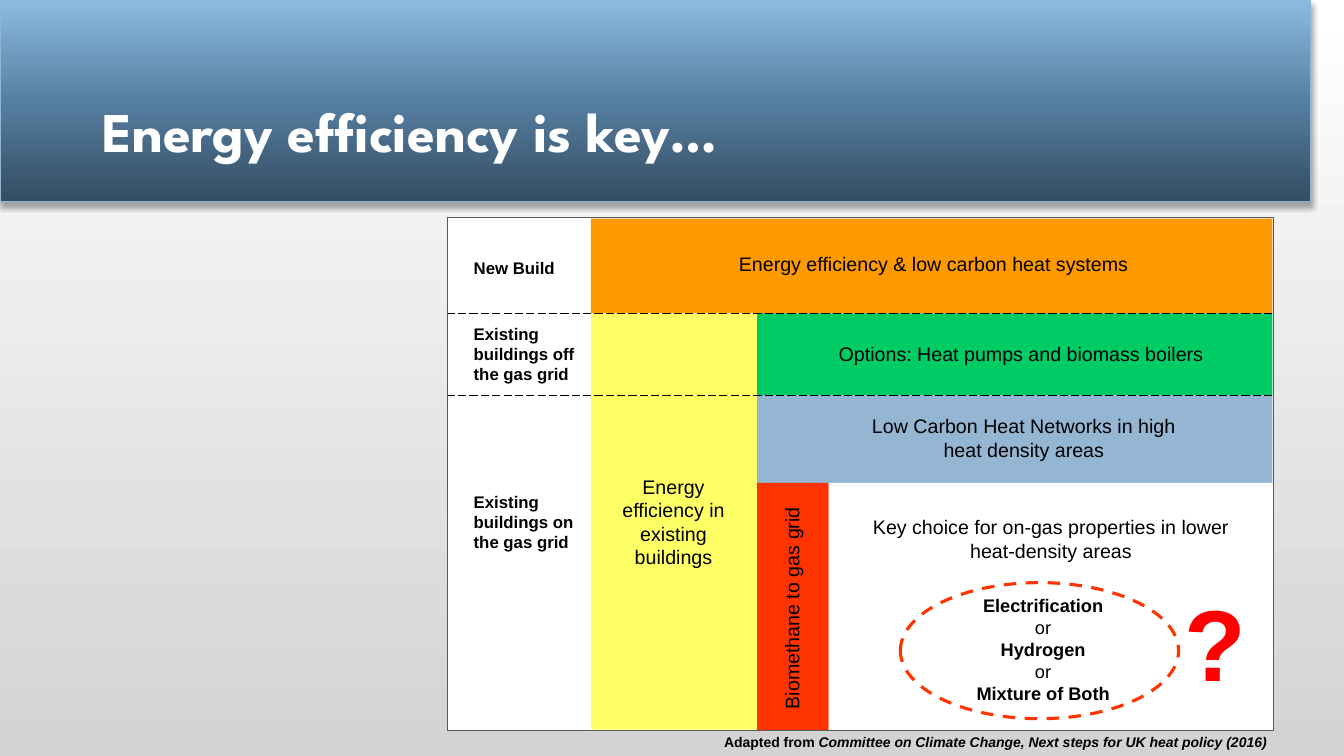
from dataclasses import dataclass

from lxml.etree import SubElement
from pptx import Presentation
from pptx.dml.color import RGBColor
from pptx.enum.dml import MSO_LINE
from pptx.enum.shapes import MSO_CONNECTOR, MSO_SHAPE
from pptx.enum.text import PP_ALIGN
from pptx.oxml.ns import qn
from pptx.util import Inches, Pt


@dataclass(frozen=True)
class Theme:
    head: str = "League Spartan"
    body: str = "Arial"
    title: int = 40
    text: int = 14
    choice: int = 13
    label: int = 12
    note: int = 10
    mark: int = 72
    black: str = "000000"
    white: str = "FFFFFF"
    frame: str = "595959"
    orange: str = "FF9900"
    yellow: str = "FFFF66"
    green: str = "00CC66"
    blue: str = "94B6D2"
    red: str = "FF3300"
    alert: str = "FF0000"
    edge: str = "92B5D5"
    back: tuple = ((0, "FFFFFF"), (100, "D3D3D3"))
    band: tuple = ((0, "334C62"), (50, "567FA1"), (70, "6D97BA"), (100, "8BBBE3"))


T = Theme()
WIDE, HIGH = 13.33, 7.5
COLS = [4.44, 5.86, 7.51, 8.22, 12.62]
ROWS = [2.17, 3.11, 3.92, 4.79, 7.24]
FRAME = (4.44, 2.16, 8.19, 5.09)
OVAL = (8.93, 5.78, 2.76, 1.35)
BASE = 2.06
BANNER = [(WIDE, 0), (0, 0), (0, BASE), (2.18, BASE), (2.6, 2.38), (2.62, 2.39),
          (2.67, 2.39), (2.7, 2.38), (3.11, BASE), (WIDE, BASE)]

# first column, first row, end column, end row, colour
CELLS = [
    (1, 0, 4, 1, T.orange),
    (1, 1, 2, 4, T.yellow),
    (2, 1, 4, 2, T.green),
    (2, 2, 4, 3, T.blue),
    (2, 3, 3, 4, T.red),
    (3, 3, 4, 4, T.white),
]

# top, height, text
LABELS = [
    (2.51, 0.31, "New Build"),
    (3.16, 0.71, "Existing buildings off the gas grid"),
    (4.83, 0.71, "Existing buildings on the gas grid"),
]

# box, text, format
NOTES = [
    ((7.23, 2.45, 4.1, 0.34), "Energy efficiency & low carbon heat systems", {}),
    ((8.22, 3.34, 3.86, 0.34), "Options: Heat pumps and biomass boilers", {}),
    ((6.04, 4.66, 1.28, 1.05), "Energy efficiency in existing buildings",
     {"align": PP_ALIGN.CENTER}),
    ((8.5, 4.06, 3.31, 0.57), "Low Carbon Heat Networks in high heat density areas",
     {"align": PP_ALIGN.CENTER}),
    ((6.74, 5.85, 2.23, 0.34), "Biomethane to gas grid", {"turn": 270}),
    ((8.36, 5.06, 4.13, 0.58),
     "Key choice for on-gas properties in lower heat-density areas",
     {"align": PP_ALIGN.CENTER}),
]
CHOICES = ["Electrification", "or", "Hydrogen", "or", "Mixture of Both"]
SOURCE = [("Adapted from ", {"bold": True}),
          ("Committee on Climate Change, Next steps for UK heat policy (2016)",
           {"bold": True, "italic": True})]


def rgb(code):
    return RGBColor.from_string(code)


def inch(box):
    return [Inches(v) for v in box]


def blend(fill, root, stops, angle):
    """Fill with a gradient; the angle runs counter-clockwise."""
    fill.gradient()
    fill.gradient_angle = angle
    ramp = next(root.iter(qn("a:gsLst")))
    for old in list(ramp):
        ramp.remove(old)
    for spot, code in stops:
        stop = SubElement(ramp, qn("a:gs"), pos=str(spot * 1000))
        SubElement(stop, qn("a:srgbClr"), val=code)


def stroke(line, code, width, dash=None):
    line.color.rgb = rgb(code)
    line.width = Pt(width)
    if dash:
        line.dash_style = dash


def write(slide, box, text, size=T.text, font=T.body, color=T.black, bold=False,
          align=PP_ALIGN.LEFT, turn=0, wrap=True):
    """Text is a string, or a list of paragraphs made of (words, style) runs."""
    shape = slide.shapes.add_textbox(*inch(box))
    shape.rotation = turn
    frame = shape.text_frame
    frame.word_wrap = wrap
    paras = [[(text, {"bold": bold})]] if isinstance(text, str) else text
    for n, runs in enumerate(paras):
        para = frame.add_paragraph() if n else frame.paragraphs[0]
        para.alignment = align
        for words, style in runs:
            run = para.add_run()
            run.text = words
            run.font.name = font
            run.font.size = Pt(size)
            run.font.color.rgb = rgb(color)
            run.font.bold = style.get("bold", False)
            run.font.italic = style.get("italic", False)


def block(slide, kind, box, color=None):
    shape = slide.shapes.add_shape(kind, *inch(box))
    shape.shadow.inherit = False
    if color:
        shape.fill.solid()
        shape.fill.fore_color.rgb = rgb(color)
    else:
        shape.fill.background()
    shape.line.fill.background()
    return shape


def banner(slide):
    pen = slide.shapes.build_freeform(*BANNER[0], scale=Inches(1))
    pen.add_line_segments(BANNER[1:], close=True)
    shape = pen.convert_to_shape()
    blend(shape.fill, shape._element, T.band, 90)
    stroke(shape.line, T.edge, 1)
    shape.shadow.inherit = False
    glow = SubElement(shape._element.spPr.find(qn("a:effectLst")), qn("a:outerShdw"),
                      blurRad=str(Pt(4)), dist=str(Pt(3)), dir="5400000",
                      rotWithShape="0")
    tint = SubElement(glow, qn("a:srgbClr"), val=T.black)
    SubElement(tint, qn("a:alpha"), val="35000")


def grid(slide):
    frame = block(slide, MSO_SHAPE.RECTANGLE, FRAME, T.white)
    stroke(frame.line, T.frame, 1)
    for left, top, right, end, color in CELLS:
        x, y = COLS[left], ROWS[top]
        block(slide, MSO_SHAPE.RECTANGLE,
              (x, y, COLS[right] - x, ROWS[end] - y), color)


def rules(slide):
    for y in ROWS[1:3]:
        line = slide.shapes.add_connector(
            MSO_CONNECTOR.STRAIGHT, *inch((COLS[-1], y, COLS[0], y)))
        stroke(line.line, T.black, 0.75, MSO_LINE.LONG_DASH)
        SubElement(line._element.spPr, qn("a:effectLst"))


def main():
    deck = Presentation()
    deck.slide_width, deck.slide_height = inch((WIDE, HIGH))
    slide = deck.slides.add_slide(deck.slide_layouts[6])
    blend(slide.background.fill, slide._element, T.back, 270)
    banner(slide)
    write(slide, (0.92, 0.91, 11.59, 0.77), "Energy efficiency is key…",
          size=T.title, font=T.head, color=T.white, bold=True)
    grid(slide)
    for top, high, text in LABELS:
        write(slide, (4.6, top, 1.34, high), text, size=T.label, bold=True)
    for box, text, style in NOTES:
        write(slide, box, text, **style)
    picks = [[(word, {"bold": word != "or"})] for word in CHOICES]
    write(slide, (8.85, 5.85, 2.99, 1.21), picks, size=T.choice,
          align=PP_ALIGN.CENTER)
    rules(slide)
    oval = block(slide, MSO_SHAPE.OVAL, OVAL)
    stroke(oval.line, T.red, 2.25, MSO_LINE.DASH)
    write(slide, (4.6, 7.23, 8.06, 0.27), [SOURCE], size=T.note,
          align=PP_ALIGN.RIGHT)
    write(slide, (11.65, 5.71, 0.82, 1.31), "?", size=T.mark, color=T.alert,
          bold=True, wrap=False)
    deck.save("out.pptx")


if __name__ == "__main__":
    main()
